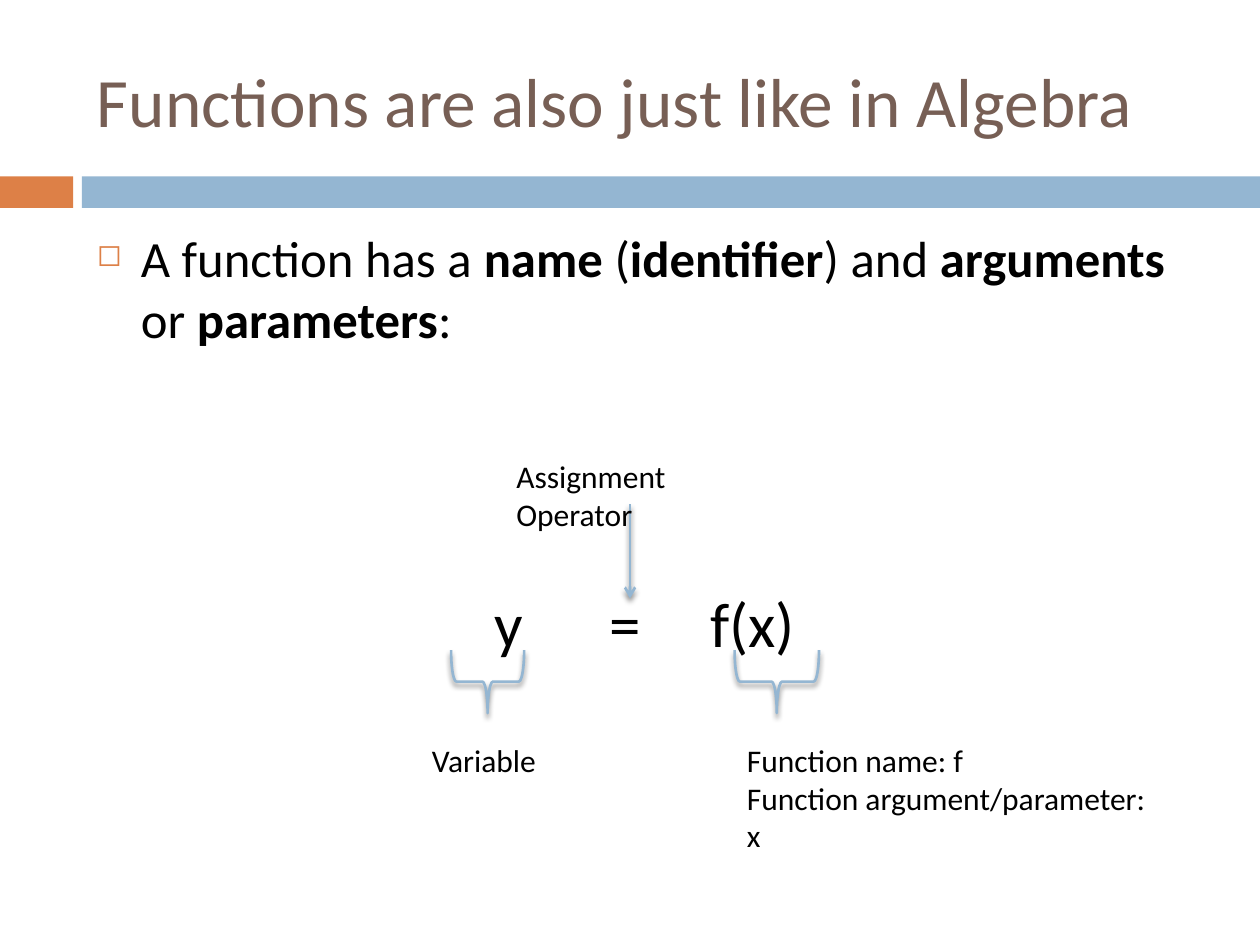
from lxml import etree
from pptx import Presentation
from pptx.dml.color import RGBColor
from pptx.enum.shapes import MSO_CONNECTOR, MSO_SHAPE
from pptx.enum.text import MSO_ANCHOR
from pptx.oxml.ns import qn
from pptx.util import Inches, Pt

RECT, BRACE = MSO_SHAPE.RECTANGLE, MSO_SHAPE.RIGHT_BRACE
LINE = MSO_CONNECTOR.STRAIGHT
MIDDLE, TOP = MSO_ANCHOR.MIDDLE, MSO_ANCHOR.TOP
BLACK = RGBColor(0x00, 0x00, 0x00)
BROWN = RGBColor(0x77, 0x5F, 0x55)
ORANGE = RGBColor(0xDD, 0x80, 0x47)
BLUE = RGBColor(0x94, 0xB6, 0xD2)
FONT = "Calibri"


def inches(box):
    return [Inches(v) for v in box]


def child(parent, tag, **attrs):
    node = etree.SubElement(parent, qn(tag))
    for key, value in attrs.items():
        node.set(key, str(value))
    return node


def add_text(slide, box, paras, size, color=BLACK, anchor=TOP):
    """Place paragraphs, each a list of (text, bold) runs; return the frame."""
    frame = slide.shapes.add_textbox(*inches(box)).text_frame
    frame.word_wrap = True
    frame.vertical_anchor = anchor
    for i, runs in enumerate(paras):
        para = frame.add_paragraph() if i else frame.paragraphs[0]
        for text, bold in runs:
            run = para.add_run()
            run.text = text
            font = run.font
            font.name, font.size, font.bold = FONT, Pt(size), bold
            font.color.rgb = color
    return frame


def add_bar(slide, box, color):
    bar = slide.shapes.add_shape(RECT, *inches(box))
    bar.shadow.inherit = False
    bar.fill.solid()
    bar.fill.fore_color.rgb = color
    bar.line.fill.background()


def style_line(shape):
    """Give a blue outline and a soft shadow that falls straight down."""
    shape.line.color.rgb = BLUE
    shape.line.width = Pt(1.5)
    effects = child(shape._element.spPr, "a:effectLst")
    shadow = child(effects, "a:outerShdw", blurRad=Pt(3), dist=Pt(2.4),
                   dir=90 * 60000, rotWithShape=0)
    color = child(shadow, "a:srgbClr", val=BLACK)
    child(color, "a:alpha", val=45000)


def add_brace(slide, box):
    """Fill the box with a brace that points down."""
    left, top, width, height = box
    shift = (width - height) / 2
    brace = slide.shapes.add_shape(
        BRACE, *inches((left + shift, top - shift, height, width)))
    brace.rotation = 90
    brace.fill.background()
    style_line(brace)


def add_arrow(slide, x, top, bottom):
    arrow = slide.shapes.add_connector(LINE, *inches((x, top, x, bottom)))
    style_line(arrow)
    child(arrow.line._get_or_add_ln(), "a:tailEnd", type="arrow")


def add_header(slide, box):
    left, top, width, height = box
    add_text(slide, (left + 0.67, top + 0.25, width - 1.08, 1.08),
             [[("Functions are also just like in Algebra", False)]],
             39.6, BROWN, MIDDLE)
    bar = 0.25
    add_bar(slide, (left, top + height - bar, 0.58, bar), ORANGE)
    add_bar(slide, (left + 0.65, top + height - bar, width - 0.65, bar), BLUE)


def add_bullet(slide, box):
    runs = [("A function has a ", False), ("name", True), (" (", False),
            ("identifier", True), (") and ", False), ("arguments", True),
            (" or ", False), ("parameters", True), (":", False)]
    props = add_text(slide, box, [runs], 29).paragraphs[0]._p.get_or_add_pPr()
    props.set("marL", str(Inches(0.35)))
    props.set("indent", str(Inches(-0.35)))
    child(child(props, "a:buClr"), "a:srgbClr", val=ORANGE)
    child(props, "a:buSzPct", val=60000)
    child(props, "a:buChar", char="◻")


def add_equation(slide, box):
    """Show the equation with its notes around it."""
    left, top, width, height = box
    frame = add_text(slide, (left + 0.5, top + 1.01, 2.8, 0.71),
                     [[("y\t=\tf(x)", False)]], 36)
    tabs = child(frame.paragraphs[0]._p.get_or_add_pPr(), "a:tabLst")
    for stop in (0.91, 1.71):
        child(tabs, "a:tab", pos=Inches(stop), algn="l")

    add_brace(slide, (left + 0.25, top + 1.58, 0.58, 0.5))
    add_brace(slide, (left + 2.5, top + 1.58, 0.67, 0.5))
    add_arrow(slide, left + 1.67, top + 0.42, top + 1.17)

    notes = [
        (0, 2.25, 1.09, 0.4, ["Variable"]),
        (2.5, 2.25, width - 2.5, height - 2.25,
         ["Function name: f", "Function argument/parameter: x"]),
        (0.67, 0, 2.33, 0.4, ["Assignment Operator"]),
    ]
    for dx, dy, wide, high, lines in notes:
        add_text(slide, (left + dx, top + dy, wide, high),
                 [[(line, False)] for line in lines], 18)


def main():
    deck = Presentation()
    deck.slide_width, deck.slide_height = Inches(10), Inches(7.5)
    slide = deck.slides.add_slide(deck.slide_layouts[6])
    add_header(slide, (0, 0, 10, 1.65))
    add_bullet(slide, (0.67, 1.75, 8.92, 1.1))
    add_equation(slide, (3.33, 3.58, 5.96, 2.96))
    deck.save("out.pptx")


if __name__ == "__main__":
    main()
